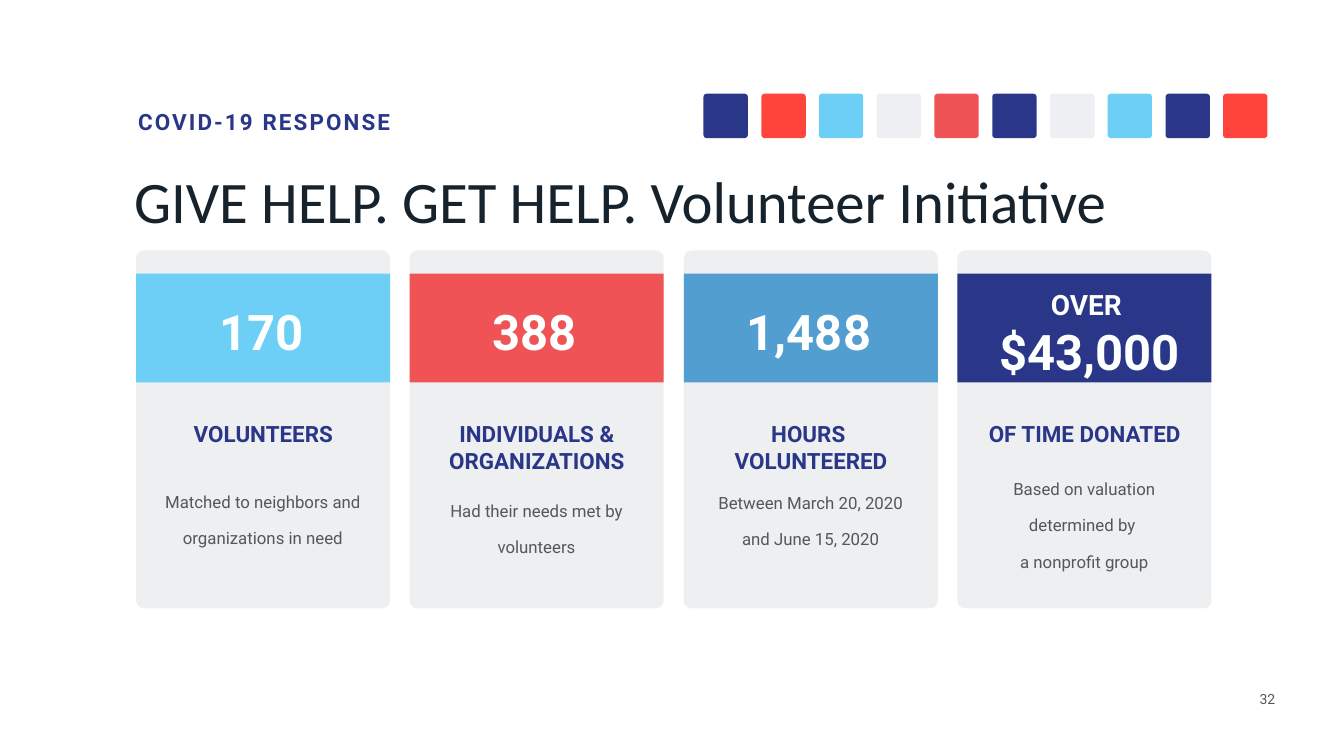
from pptx import Presentation
from pptx.dml.color import RGBColor as RGB
from pptx.enum.shapes import MSO_SHAPE as SHAPE
from pptx.enum.text import MSO_ANCHOR as ANCHOR, MSO_AUTO_SIZE as AUTO, PP_ALIGN as ALIGN
from pptx.oxml.ns import qn
from pptx.util import Emu, Pt
from lxml import etree

SCALE = 9144  # 100 px to the inch

NAVY = RGB(0x2A, 0x36, 0x88)
RED = RGB(0xFF, 0x44, 0x3B)
SKY = RGB(0x6D, 0xCF, 0xF6)
CORAL = RGB(0xF0, 0x53, 0x55)
BLUE = RGB(0x53, 0x9E, 0xD0)
PALE = RGB(0xEE, 0xEF, 0xF2)
MIST = RGB(0xDB, 0xDE, 0xE1)
INK = RGB(0x16, 0x22, 0x2C)
GRAY = RGB(0x51, 0x58, 0x5F)
WHITE = RGB(0xFE, 0xFF, 0xFF)

TITLE = {"name": "Calibri", "size": Pt(84)}
LABEL = {"name": "Roboto", "size": Pt(32), "bold": True}
NOTE = {"name": "Roboto", "size": Pt(24)}
PAGE = {"name": "Roboto", "size": Pt(20)}
VALUE = {"name": "Roboto", "size": Pt(70), "bold": True}
SMALL = VALUE | {"size": Pt(40)}

SQUARES = [NAVY, RED, SKY, PALE, CORAL, NAVY, PALE, SKY, NAVY, RED]

# band colour, value runs, value shift (x, y), label, note, note top, note height
CARDS = [
    (SKY, [("170", VALUE)], (0, 0), "VOLUNTEERS",
     "Matched to neighbors and organizations in need", 939, 152),
    (CORAL, [("388", VALUE)], (0, 0), "INDIVIDUALS & ORGANIZATIONS",
     "Had their needs met by volunteers", 957, 156),
    (BLUE, [("1,488", VALUE)], (0, 0), "HOURS \nVOLUNTEERED",
     "Between March 20, 2020 and June 15, 2020", 940, 156),
    (NAVY, [("OVER\n ", SMALL), ("$43,000", VALUE)], (7, -28), "OF TIME DONATED",
     "Based on valuation determined by \na nonprofit group", 913, 218),
]


def px(*sizes):
    return [Emu(round(size) * SCALE) for size in sizes]


def add_block(shapes, kind, box, color, round_by=None, alpha=None):
    """Add a filled shape without outline; alpha is a percentage."""
    block = shapes.add_shape(kind, *px(*box))
    block.shadow.inherit = False
    block.line.fill.background()
    block.fill.solid()
    block.fill.fore_color.rgb = color
    if round_by is not None:
        block.adjustments[0] = round_by
    if alpha is not None:
        tint = block._element.spPr.find(qn("a:solidFill"))[0]
        etree.SubElement(tint, qn("a:alpha")).set("val", str(alpha * 1000))


def add_text(shapes, box, parts, color, align=ALIGN.CENTER, anchor=ANCHOR.TOP,
             inset=(4, 4), grow=False, leading=None, track=None):
    """Add one paragraph of (text, format) parts; a newline is a line break."""
    frame = shapes.add_textbox(*px(*box)).text_frame
    across, down = px(*inset)
    layout = {
        "word_wrap": True, "vertical_anchor": anchor,
        "auto_size": AUTO.SHAPE_TO_FIT_TEXT if grow else AUTO.NONE,
        "margin_left": across, "margin_right": across,
        "margin_top": down, "margin_bottom": down,
    }
    for name, value in layout.items():
        setattr(frame, name, value)
    para = frame.paragraphs[0]
    para.alignment = align
    para.line_spacing = leading
    for text, style in parts:
        for i, line in enumerate(text.split("\n")):
            if i:
                para.add_line_break()
            run = para.add_run()
            run.text = line
            for name, value in style.items():
                setattr(run.font, name, value)
            run.font.color.rgb = color
            if track:
                run._r.get_or_add_rPr().set("spc", str(track * 100))


def add_card(slide, left, card):
    band, value, (dx, dy), label, note, top, height = card
    shapes = slide.shapes.add_group_shape().shapes
    add_block(shapes, SHAPE.ROUNDED_RECTANGLE, (left, 497, 504, 710), MIST, 0.03, 48)
    add_text(shapes, (left, 829, 505, 58), [(label, LABEL)], NAVY)
    add_text(shapes, (left + 37, top, 429, height), [(note, NOTE)], GRAY,
             inset=(10, 5), grow=True, leading=1.8)
    add_block(shapes, SHAPE.RECTANGLE, (left, 543, 504, 216), band)
    add_text(shapes, (left + dx, 595 + dy, 497, 129), value, WHITE)


def add_squares(slide):
    shapes = slide.shapes.add_group_shape().shapes
    for i, color in enumerate(SQUARES):
        add_block(shapes, SHAPE.ROUNDED_RECTANGLE,
                  (1396 + i * 114.6, 186, 88, 88), color, 0.07)


def main():
    deck = Presentation()
    deck.slide_width, deck.slide_height = px(2667, 1500)
    slide = deck.slides.add_slide(deck.slide_layouts[6])
    add_text(slide.shapes, (2466, 1366, 98, 42), [("32", PAGE)], GRAY, grow=True)
    add_text(slide.shapes, (262, 323, 2404, 173),
             [("GIVE HELP. GET HELP. Volunteer Initiative", TITLE)], INK, ALIGN.LEFT)
    add_text(slide.shapes, (270, 211, 612, 62), [("COVID-19 RESPONSE", LABEL)],
             NAVY, ALIGN.LEFT, ANCHOR.MIDDLE, grow=True, track=3)
    for i, card in enumerate(CARDS):
        add_card(slide, 270 + round(i * 543.4), card)
    add_squares(slide)
    deck.save("out.pptx")


if __name__ == "__main__":
    main()
